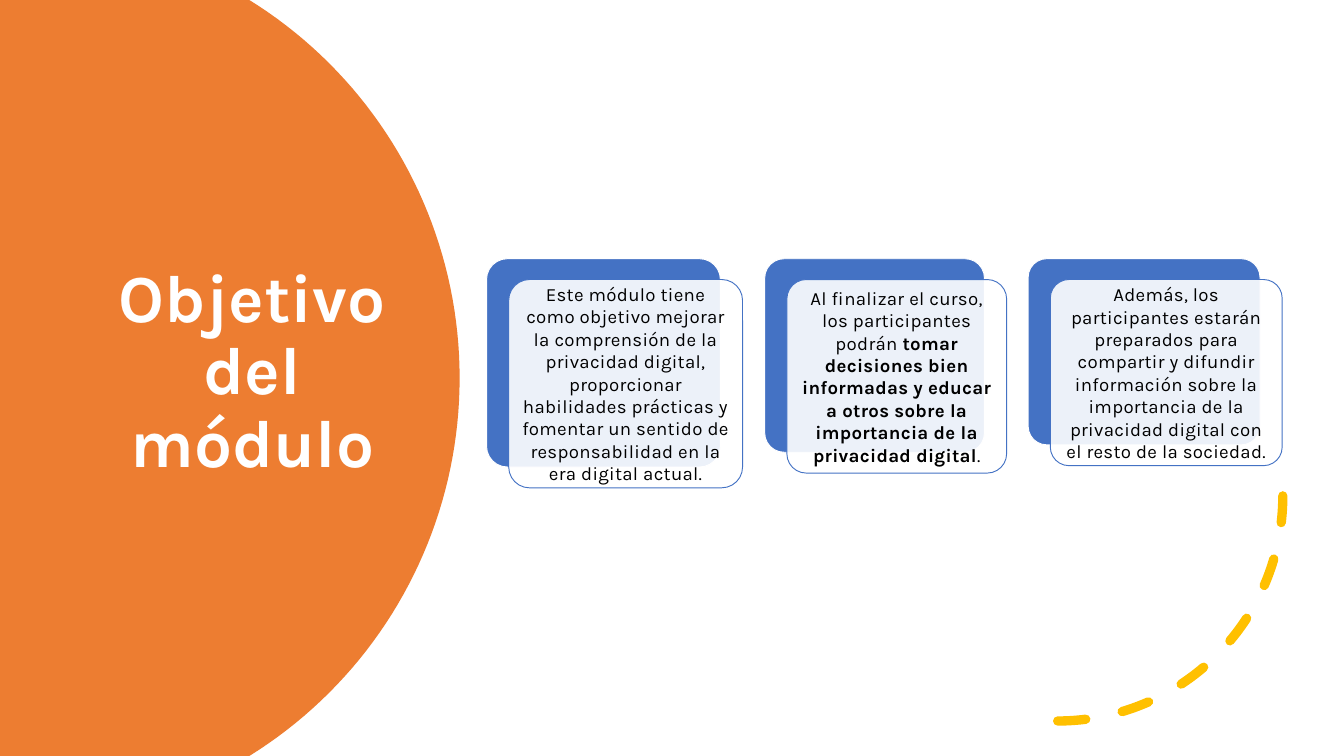
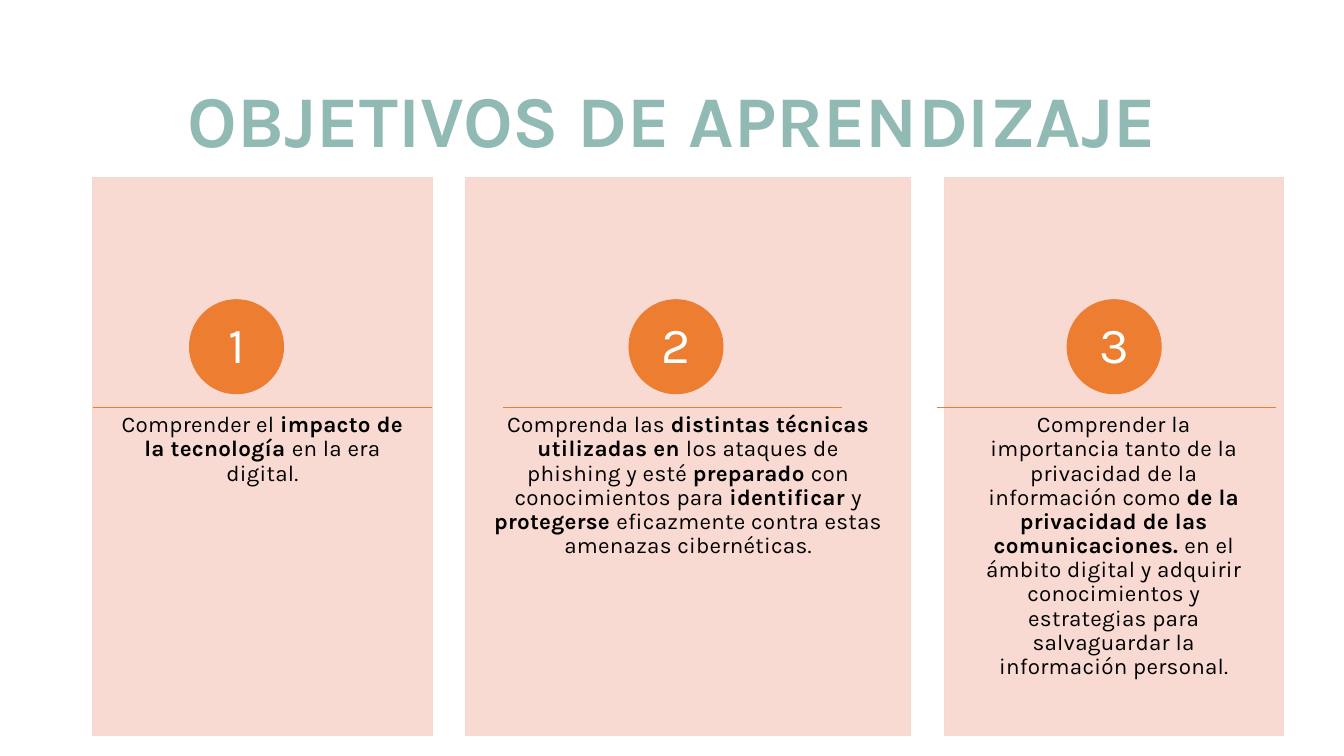
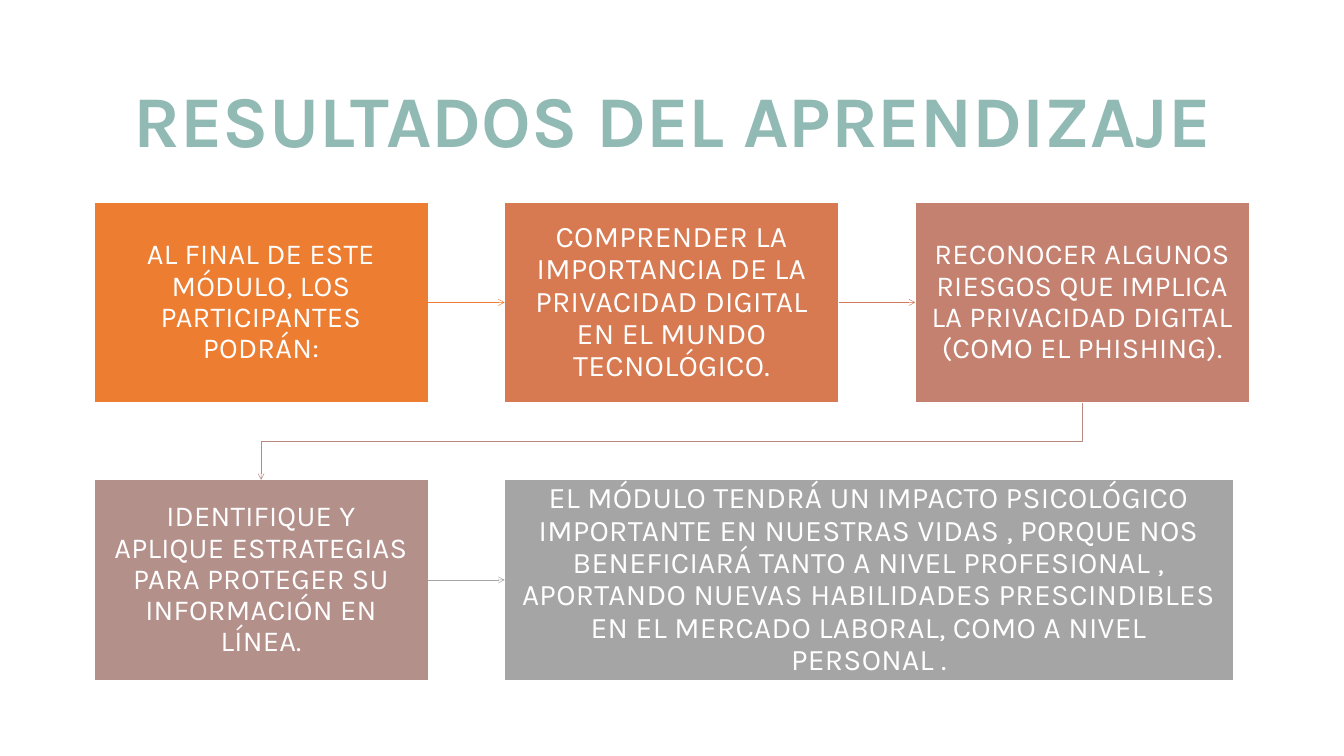
import math
from dataclasses import dataclass
from typing import NamedTuple, Optional

import pptx
import pptx.dml.color
import pptx.enum.dml
import pptx.enum.shapes
import pptx.enum.text
import pptx.oxml.ns
import pptx.util
from lxml import etree

SHAPE = pptx.enum.shapes.MSO_SHAPE
CONNECTOR = pptx.enum.shapes.MSO_CONNECTOR
ANCHOR = pptx.enum.text.MSO_ANCHOR
qn = pptx.oxml.ns.qn

WIDTH, HEIGHT = pptx.util.Inches(20), pptx.util.Inches(11.25)
COLS, ROWS = 20, 11.25
TOP, LEFT, BOTTOM, RIGHT = range(4)


@dataclass(frozen=True)
class Theme:
    font: str = "Karla"
    white: str = "FFFFFF"
    black: str = "000000"
    orange: str = "ED7D31"
    blue: str = "4472C4"
    yellow: str = "FFC000"
    teal: str = "92BAB5"
    pink: str = "F8D7CE"
    copper: str = "D87A51"
    rose: str = "C48170"
    mauve: str = "B4908B"
    grey: str = "A5A5A5"
    copper_line: str = "D17B5C"
    mauve_line: str = "B98A82"
    cover_title: int = 72
    title: int = 78
    number: int = 54
    panel: int = 24
    card: int = 20
    opacity: int = 90


THEME = Theme()


class Area(NamedTuple):
    """A place on the grid, in columns and rows."""
    col: float
    row: float
    cols: float
    rows: float


class Insets(NamedTuple):
    left: float = 0.1
    top: float = 0.05
    right: float = 0.1
    bottom: float = 0.05


@dataclass(frozen=True)
class TextStyle:
    size: int
    color: str
    bold: bool = False
    tracking: float = 0
    spacing: float = 0.9
    anchor: ANCHOR = ANCHOR.MIDDLE
    insets: Insets = Insets()


class Card(NamedTuple):
    col: float
    cols: float
    rows: float
    text: str


class Panel(NamedTuple):
    col: float
    cols: float
    circle_col: float
    rule_col: float
    text: str


class Step(NamedTuple):
    col: int
    row: int
    cols: float
    color: str
    size: int
    text: str


CARDS = [
    Card(7.24, 3.48, 3.1, "Este módulo tiene como objetivo mejorar la comprensión de la "
         "privacidad digital, proporcionar habilidades prácticas y fomentar un sentido de "
         "responsabilidad en la era digital actual."),
    Card(11.38, 3.27, 2.88, "Al finalizar el curso, los participantes podrán *tomar decisiones "
         "bien informadas y educar a otros sobre la importancia de la privacidad digital*."),
    Card(15.3, 3.45, 2.77, "Además, los participantes estarán preparados para compartir y "
         "difundir información sobre la importancia de la privacidad digital con el resto de "
         "la sociedad."),
]
PANELS = [
    Panel(1.38, 5.05, 2.82, 1.38,
          "Comprender el *impacto de la tecnología *en la era digital."),
    Panel(6.93, 6.62, 9.36, 7.48,
          "Comprenda las *distintas técnicas utilizadas en *los ataques de phishing y esté "
          "*preparado *con conocimientos para *identificar *y *protegerse *eficazmente contra "
          "estas amenazas cibernéticas."),
    Panel(14.05, 5.05, 15.88, 13.94,
          "Comprender la importancia tanto de la privacidad de la información como *de la "
          "privacidad de las comunicaciones. *en el ámbito digital y adquirir conocimientos y "
          "estrategias para salvaguardar la información personal."),
]
STEP_COLS, STEP_ROWS = 4.97, 2.98
STEPS = [
    Step(0, 0, STEP_COLS, THEME.orange, 31,
         "AL FINAL DE ESTE MÓDULO, LOS PARTICIPANTES PODRÁN:"),
    Step(1, 0, STEP_COLS, THEME.copper, 32,
         "COMPRENDER LA IMPORTANCIA DE LA PRIVACIDAD DIGITAL EN EL MUNDO TECNOLÓGICO."),
    Step(2, 0, STEP_COLS, THEME.rose, 31,
         "RECONOCER ALGUNOS RIESGOS QUE IMPLICA LA PRIVACIDAD DIGITAL (COMO EL PHISHING)."),
    Step(0, 1, STEP_COLS, THEME.mauve, 31,
         "IDENTIFIQUE Y APLIQUE ESTRATEGIAS PARA PROTEGER SU INFORMACIÓN EN LÍNEA."),
    Step(1, 1, 10.84, THEME.grey, 32,
         "EL MÓDULO TENDRÁ UN IMPACTO PSICOLÓGICO IMPORTANTE EN NUESTRAS VIDAS , PORQUE NOS "
         "BENEFICIARÁ TANTO A NIVEL PROFESIONAL , APORTANDO NUEVAS HABILIDADES PRESCINDIBLES "
         "EN EL MERCADO LABORAL, COMO A NIVEL PERSONAL ."),
]
STEP_ARROWS = [THEME.orange, THEME.copper_line, THEME.mauve_line, THEME.grey]


def x(cols: float) -> int:
    return round(WIDTH * cols / COLS)


def y(rows: float) -> int:
    return round(HEIGHT * rows / ROWS)


def box(area: Area) -> tuple:
    return x(area.col), y(area.row), x(area.cols), y(area.rows)


def rgb(color: str) -> pptx.dml.color.RGBColor:
    return pptx.dml.color.RGBColor.from_string(color)


def set_all(target, values: dict) -> None:
    for name, value in values.items():
        setattr(target, name, value)


def paint_line(sp, color: str, width: float) -> None:
    sp.line.color.rgb = rgb(color)
    sp.line.width = pptx.util.Pt(width)


def paint(sp, fill: str, line: str, opacity: int = 100) -> None:
    sp.shadow.inherit = False
    sp.fill.solid()
    sp.fill.fore_color.rgb = rgb(fill)
    if opacity < 100:
        clr = sp._element.spPr.find(qn("a:solidFill")).find(qn("a:srgbClr"))
        etree.SubElement(clr, qn("a:alpha"), val=str(opacity * 1000))
    paint_line(sp, line, 1)


def write(sp, text: str, style: TextStyle) -> None:
    """Fill a shape with one centred paragraph; asterisks switch bold on and off."""
    tf = sp.text_frame
    set_all(tf, {"word_wrap": True, "vertical_anchor": style.anchor})
    set_all(tf, {f"margin_{side}": pptx.util.Inches(gap)
                 for side, gap in style.insets._asdict().items()})
    p = tf.paragraphs[0]
    set_all(p, {"alignment": pptx.enum.text.PP_ALIGN.CENTER, "line_spacing": style.spacing})
    for i, part in enumerate(text.split("*")):
        r = p.add_run()
        r.text = part
        set_all(r.font, {"name": THEME.font, "size": pptx.util.Pt(style.size),
                         "bold": style.bold or i % 2 == 1})
        r.font.color.rgb = rgb(style.color)
        if style.tracking:
            r._r.get_or_add_rPr().set("spc", str(round(style.tracking * 100)))


def add_shape(s, kind: SHAPE, area: Area, fill: str, line: str, opacity: int = 100,
              adj: Optional[float] = None):
    sp = s.shapes.add_shape(kind, *box(area))
    paint(sp, fill, line, opacity)
    if adj is not None:
        sp.adjustments[0] = adj
    return sp


def add_title(s, text: str, size: int = THEME.title, color: str = THEME.teal,
              area: Area = Area(1.38, 0.91, 17.25, 1.86)) -> None:
    write(s.shapes.add_textbox(*box(area)), text, TextStyle(size, color, bold=True))


def add_line(s, kind: CONNECTOR, color: str, width: float, ends: tuple = (0, 0, 0, 0)):
    cn = s.shapes.add_connector(kind, *ends)
    paint_line(cn, color, width)
    etree.SubElement(cn._element.spPr, qn("a:effectLst"))
    return cn


def add_arrow(s, start, end, color: str) -> None:
    """Join two boxes: straight within a row, elbowed down to the next row."""
    same_row = start.top == end.top
    kind = CONNECTOR.STRAIGHT if same_row else CONNECTOR.ELBOW
    cn = add_line(s, kind, color, 0.5)
    cn.begin_connect(start, RIGHT if same_row else BOTTOM)
    cn.end_connect(end, LEFT if same_row else TOP)
    etree.SubElement(cn.line._get_or_add_ln(), qn("a:tailEnd"), type="arrow")
    if not same_row:
        turn_elbow(cn)


def turn_elbow(cn) -> None:
    """Turn an elbow a quarter so that it leaves downwards and arrives from above."""
    left, top, width, height = cn.left, cn.top, cn.width, cn.height
    cn._element.flipH = False
    set_all(cn, {"left": left + (width - height) // 2, "top": top + (height - width) // 2,
                 "width": height, "height": width, "rotation": 90})


def add_half_disc(s) -> None:
    """Draw the part of a big disc that lies on the slide's left side."""
    center, radius, steps = 0.22, 6.62, 80
    middle = ROWS / 2
    reach = math.asin(middle / radius)
    angles = [reach * (2 * i / steps - 1) for i in range(steps + 1)]
    arc = [(x(center + radius * math.cos(a)), y(middle + radius * math.sin(a))) for a in angles]
    fb = s.shapes.build_freeform(0, 0)
    fb.add_line_segments(arc + [(0, HEIGHT)], close=True)
    sp = fb.convert_to_shape()
    paint(sp, THEME.orange, THEME.orange)
    sp.line.fill.background()


def add_dashed_arc(s) -> None:
    sp = s.shapes.add_shape(SHAPE.ARC, *box(Area(12.39, 4.03, 6.7, 6.7)))
    sp.shadow.inherit = False
    sp.fill.background()
    paint_line(sp, THEME.yellow, 10)
    sp.line.dash_style = pptx.enum.dml.MSO_LINE.DASH
    sp.line._get_or_add_ln().set("cap", "rnd")
    sp._element.spPr.find(qn("a:xfrm")).set("flipV", "1")


def build_module_goal(s) -> None:
    add_half_disc(s)
    add_title(s, "Objetivo del módulo", THEME.cover_title, THEME.white,
              Area(1.13, 1.89, 5.25, 7.32))
    add_dashed_arc(s)
    style = TextStyle(THEME.card, THEME.black, tracking=0.3, spacing=1.0,
                      insets=Insets(0.08, 0.08, 0.08, 0.08))
    for card in CARDS:
        back = Area(card.col, 3.85, card.cols, card.rows)
        front = back._replace(col=back.col + 0.33, row=back.row + 0.31)
        add_shape(s, SHAPE.ROUNDED_RECTANGLE, back, THEME.blue, THEME.white, adj=0.1)
        sp = add_shape(s, SHAPE.ROUNDED_RECTANGLE, front, THEME.white, THEME.blue,
                       THEME.opacity, adj=0.1)
        write(sp, card.text, style)


def build_learning_goals(s) -> None:
    add_title(s, "OBJETIVOS DE APRENDIZAJE")
    body = TextStyle(THEME.panel, THEME.black, tracking=0.3, anchor=ANCHOR.TOP,
                     insets=Insets(0.39, 3.51, 0.39, 0.36))
    number = TextStyle(THEME.number, THEME.white, insets=Insets(0.11, 0.01, 0.11, 0.01))
    rule_row, rule_cols = 6.06, 5.05
    for i, panel in enumerate(PANELS, 1):
        sp = add_shape(s, SHAPE.RECTANGLE, Area(panel.col, 2.64, panel.cols, 8.31),
                       THEME.pink, THEME.pink, THEME.opacity)
        write(sp, panel.text, body)
        circle = add_shape(s, SHAPE.OVAL, Area(panel.circle_col, 4.46, 1.4, 1.4),
                           THEME.orange, THEME.orange)
        write(circle, str(i), number)
        add_line(s, CONNECTOR.STRAIGHT, THEME.orange, 1,
                 (x(panel.rule_col), y(rule_row), x(panel.rule_col + rule_cols), y(rule_row)))


def build_learning_results(s) -> None:
    add_title(s, "RESULTADOS DEL APRENDIZAJE")
    boxes = []
    for step in STEPS:
        area = Area(1.4 + step.col * 6.11, 3.01 + step.row * 4.13, step.cols, STEP_ROWS)
        sp = add_shape(s, SHAPE.RECTANGLE, area, step.color, THEME.white)
        write(sp, step.text, TextStyle(step.size, THEME.white, tracking=0.3,
                                       insets=Insets(0.24, 0.26, 0.24, 0.26)))
        boxes.append(sp)
    for start, end, color in zip(boxes, boxes[1:], STEP_ARROWS):
        add_arrow(s, start, end, color)


def main() -> None:
    prs = pptx.Presentation()
    set_all(prs, {"slide_width": WIDTH, "slide_height": HEIGHT})
    for build in (build_module_goal, build_learning_goals, build_learning_results):
        build(prs.slides.add_slide(prs.slide_layouts[6]))
    prs.save("out.pptx")


if __name__ == "__main__":
    main()
